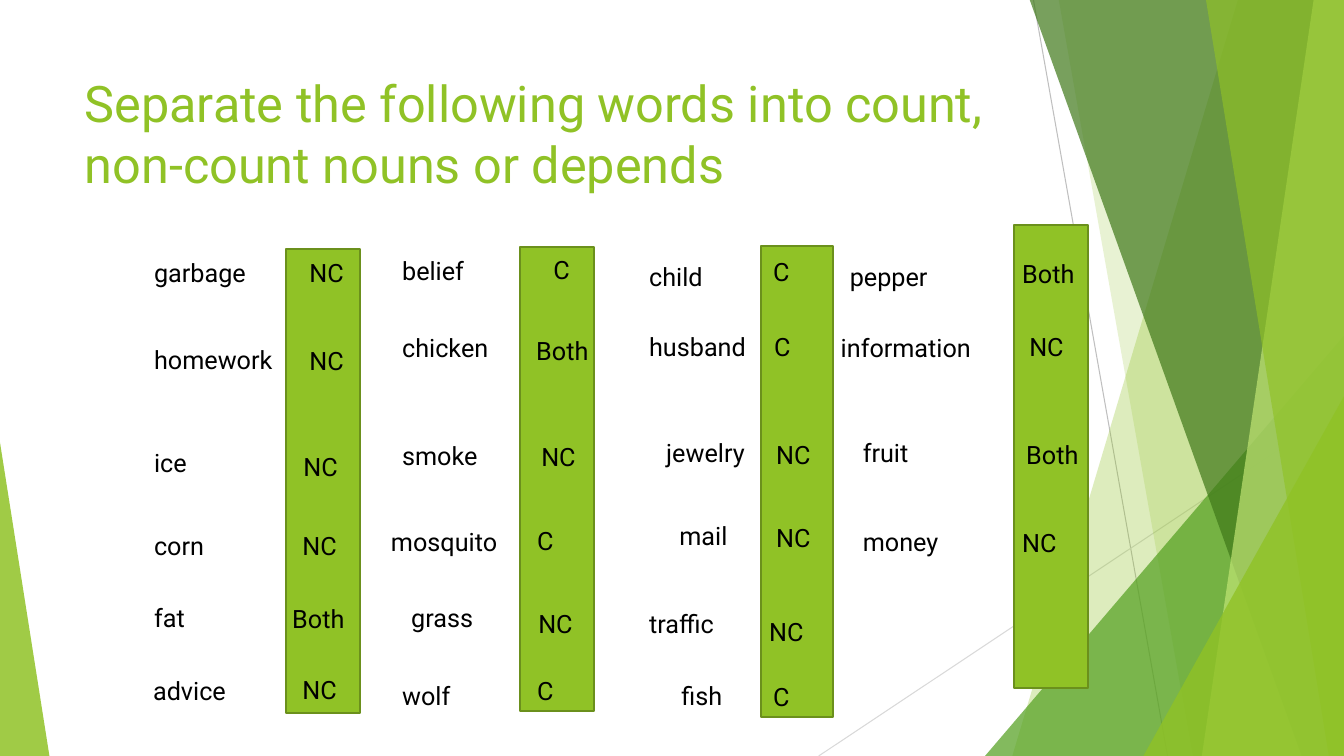
"""Build the slide that sorts nouns into count, non-count or both."""
from lxml.etree import SubElement
from pptx import Presentation
from pptx.dml.color import RGBColor
from pptx.enum.shapes import MSO_CONNECTOR, MSO_SHAPE
from pptx.enum.text import MSO_ANCHOR, MSO_AUTO_SIZE, PP_ALIGN
from pptx.oxml.ns import qn
from pptx.util import Inches, Pt

WIDTH, HEIGHT = 13.33, 7.5
FONT = "Roboto"
BLACK = RGBColor(0x00, 0x00, 0x00)
LIME = RGBColor(0x90, 0xC2, 0x26)
OLIVE = RGBColor(0x6B, 0x90, 0x1C)
LEAF = RGBColor(0x54, 0xA0, 0x21)
FOREST = RGBColor(0x3F, 0x78, 0x19)
PALE_LIME = RGBColor(0xC0, 0xE4, 0x74)
GRAY = RGBColor(0xBF, 0xBF, 0xBF)
LIGHT_GRAY = RGBColor(0xD9, 0xD9, 0xD9)

TITLE = "Separate the following words into count, non-count nouns or depends"

# Each column: answer bar (left, top, width, height), then rows of
# (noun, left, top, width) with (answer, left, top).
COLUMNS = [
    ((10.06, 2.23, 0.73, 4.6), [
        (("pepper", 8.33, 2.54, 1.33), ("Both", 10.04, 2.51)),
        (("information", 8.24, 3.25, 1.68), ("NC", 10.11, 3.24)),
        (("fruit", 8.46, 4.29, 1.04), ("Both", 10.08, 4.31)),
        (("money", 8.46, 5.17, 1.04), ("NC", 10.04, 5.18)),
    ]),
    ((7.55, 2.44, 0.71, 4.67), [
        (("child", 6.34, 2.54, 1.33), ("C", 7.57, 2.49)),
        (("husband", 6.34, 3.24, 1.33), ("C", 7.58, 3.24)),
        (("jewelry", 6.51, 4.29, 1.33), ("NC", 7.6, 4.31)),
        (("mail", 6.64, 5.11, 1.33), ("NC", 7.6, 5.13)),
        (("traffic", 6.34, 5.99, 1.33), ("NC", 7.53, 6.07)),
        (("fish", 6.66, 6.7, 1.21), ("C", 7.57, 6.71)),
    ]),
    ((5.16, 2.45, 0.73, 4.6), [
        (("belief", 3.89, 2.48, 1.33), ("C", 5.39, 2.47)),
        (("chicken", 3.89, 3.25, 1.33), ("Both", 5.22, 3.28)),
        (("smoke", 3.89, 4.32, 1.33), ("NC", 5.27, 4.33)),
        (("mosquito", 3.78, 5.17, 1.43), ("C", 5.23, 5.16)),
        (("grass", 3.98, 5.93, 1.33), ("NC", 5.24, 5.99)),
        (("wolf", 3.89, 6.7, 1.21), ("C", 5.23, 6.65)),
    ]),
    ((2.84, 2.47, 0.73, 4.6), [
        (("garbage", 1.43, 2.5, 1.33), ("NC", 2.97, 2.5)),
        (("homework", 1.43, 3.37, 1.71), ("NC", 2.97, 3.38)),
        (("ice", 1.43, 4.39, 1.03), ("NC", 2.91, 4.43)),
        (("corn", 1.43, 5.21, 1.33), ("NC", 2.9, 5.21)),
        (("fat", 1.43, 5.93, 0.72), ("Both", 2.8, 5.94)),
        (("advice", 1.42, 6.65, 1.68), ("NC", 2.9, 6.64)),
    ]),
]
ANSWER_WIDTHS = {"C": 0.36, "NC": 0.58, "Both": 0.78}

RAYS = [((10.25, 0), (11.58, HEIGHT), GRAY), ((WIDTH, 4.03), (8.12, HEIGHT), LIGHT_GRAY)]
# Facets give (top left x, bottom left x); peaks give (left, top, width, tip).
FACETS_BEHIND = [(12.28, 10.04, LIME, 30), (10.5, 11.83, LIME, 20)]
FACETS_FRONT = [(10.21, 12.91, FOREST, 70), (13.03, 11.92, PALE_LIME, 70),
                (11.96, 13.18, LIME, 65)]
PEAK_BEHIND = (9.77, 3.33, 3.56, 1, LEAF, 72)
PEAKS_FRONT = [(11.34, 3.93, 1.99, 1, LIME, 80), (0, 4.39, 0.49, 0, LIME, 85)]


def paint(shape, color, opacity=100):
    """Give a shape a flat fill without outline or shadow."""
    shape.shadow.inherit = False
    shape.line.fill.background()
    shape.fill.solid()
    shape.fill.fore_color.rgb = color
    if opacity < 100:
        swatch = shape.fill._xPr.find(qn("a:solidFill"))[0]
        SubElement(swatch, qn("a:alpha")).set("val", str(opacity * 1000))


def add_ray(slide, start, end, color):
    """Draw one thin background line."""
    ray = slide.shapes.add_connector(MSO_CONNECTOR.STRAIGHT, *map(Inches, start + end))
    ray.line.color.rgb = color
    ray.line.width = Pt(0.75)
    SubElement(ray._element.spPr, qn("a:effectLst"))


def add_facet(slide, top_x, bottom_x, color, opacity):
    """Draw a translucent panel reaching the right slide edge."""
    top = Inches(-0.01)
    outline = slide.shapes.build_freeform(Inches(top_x), top)
    outline.add_line_segments([(Inches(WIDTH), top), (Inches(WIDTH), Inches(HEIGHT)),
                               (Inches(bottom_x), Inches(HEIGHT))])
    paint(outline.convert_to_shape(), color, opacity)


def add_peak(slide, left, top, width, tip, color, opacity):
    """Draw a translucent triangle standing on the bottom edge."""
    peak = slide.shapes.add_shape(MSO_SHAPE.ISOSCELES_TRIANGLE,
                                  *map(Inches, (left, top, width, HEIGHT - top)))
    peak.adjustments[0] = tip
    paint(peak, color, opacity)


def format_text(frame, size, color):
    """Apply the slide font to a single-paragraph frame."""
    font = frame.paragraphs[0].runs[0].font
    font.name, font.size, font.color.rgb = FONT, Pt(size), color


def add_label(slide, text, left, top, width):
    """Place one noun or answer."""
    label = slide.shapes.add_textbox(*map(Inches, (left, top, width, 0.4)))
    frame = label.text_frame
    frame.word_wrap = True
    frame.auto_size = MSO_AUTO_SIZE.SHAPE_TO_FIT_TEXT
    frame.text = text
    format_text(frame, 18, BLACK)


def add_backdrop(slide):
    """Draw the faceted background from back to front."""
    for ray in RAYS:
        add_ray(slide, *ray)
    for facet in FACETS_BEHIND:
        add_facet(slide, *facet)
    add_peak(slide, *PEAK_BEHIND)
    for facet in FACETS_FRONT:
        add_facet(slide, *facet)
    for peak in PEAKS_FRONT:
        add_peak(slide, *peak)


def add_title(slide):
    """Fill and place the title placeholder."""
    title = slide.shapes.title
    title.left, title.top, title.width, title.height = map(Inches, (0.74, 0.67, 9.4, 1.44))
    frame = title.text_frame
    frame.text = TITLE
    frame.word_wrap = True
    frame.auto_size = MSO_AUTO_SIZE.NONE
    frame.vertical_anchor = MSO_ANCHOR.TOP
    frame.paragraphs[0].alignment = PP_ALIGN.LEFT
    format_text(frame, 36, LIME)


def main():
    """Assemble and save the slide."""
    deck = Presentation()
    deck.slide_width, deck.slide_height = Inches(WIDTH), Inches(HEIGHT)
    slide = deck.slides.add_slide(deck.slide_layouts[5])
    add_backdrop(slide)
    add_title(slide)
    for bar_box, _ in COLUMNS:
        bar = slide.shapes.add_shape(MSO_SHAPE.RECTANGLE, *map(Inches, bar_box))
        paint(bar, LIME)
        bar.line.color.rgb = OLIVE
        bar.line.width = Pt(1.5)
    for _, rows in COLUMNS:
        for noun, answer in rows:
            add_label(slide, *noun)
            add_label(slide, *answer, ANSWER_WIDTHS[answer[0]])
    deck.save("out.pptx")


if __name__ == "__main__":
    main()
